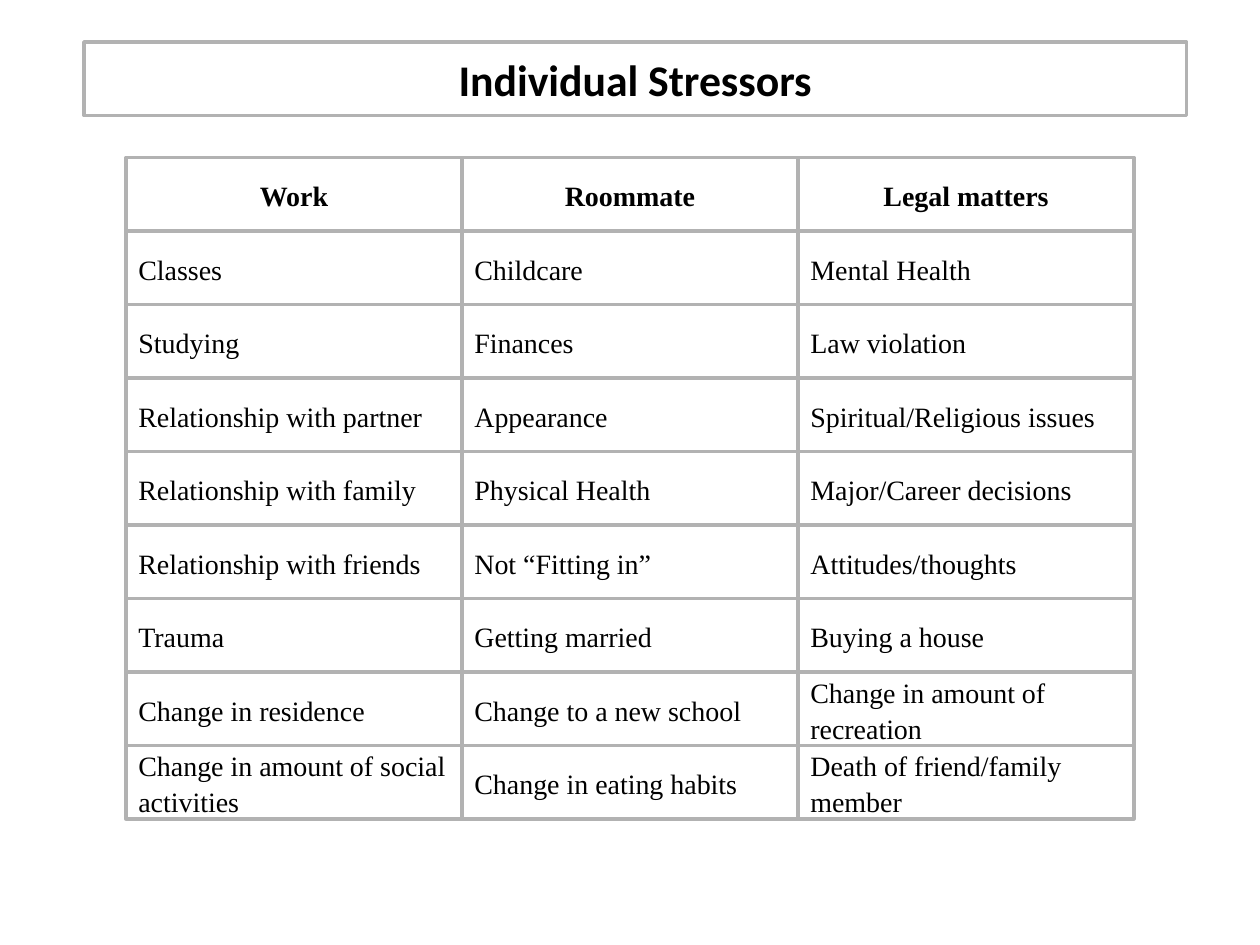
"""Build the Individual Stressors slide: a framed title above a grid of framed cells."""
from pptx import Presentation
from pptx import util as u
from pptx.dml.color import RGBColor
from pptx.enum import shapes, text

TITLE = "Individual Stressors"
HEADINGS = ("Work", "Roommate", "Legal matters")
STRESSORS = [
    ("Classes", "Childcare", "Mental Health"),
    ("Studying", "Finances", "Law violation"),
    ("Relationship with partner", "Appearance", "Spiritual/Religious issues"),
    ("Relationship with family", "Physical Health", "Major/Career decisions"),
    ("Relationship with friends", "Not “Fitting in”", "Attitudes/thoughts"),
    ("Trauma", "Getting married", "Buying a house"),
    ("Change in residence", "Change to a new school", "Change in amount of recreation"),
    ("Change in amount of social activities", "Change in eating habits",
     "Death of friend/family member"),
]
BLACK, WHITE, GREY = "000000", "FFFFFF", "B2B2B2"
LEFT, TOP = 1, 1.25
COL_WIDTH, ROW_HEIGHT = 8 / 3, 7 / 12


def paint(color_format, color):
    color_format.rgb = RGBColor.from_string(color)


def frame(sp):
    sp.fill.solid()
    paint(sp.fill.fore_color, WHITE)
    paint(sp.line.color, GREY)
    sp.line.width = u.Pt(2)


def write(sp, words, font, size, bold, centered, spacing):
    tf = sp.text_frame
    tf.word_wrap = True
    tf.auto_size = text.MSO_AUTO_SIZE.NONE
    tf.vertical_anchor = text.MSO_ANCHOR.MIDDLE
    p = tf.paragraphs[0]
    p.alignment = text.PP_ALIGN.CENTER if centered else text.PP_ALIGN.LEFT
    p.line_spacing = spacing
    r = p.add_run()
    r.text = words
    r.font.name, r.font.size, r.font.bold = font, u.Pt(size), bold
    paint(r.font.color, BLACK)


def add_title(s):
    sp = s.shapes.title
    sp.left, sp.top = u.Inches(2 / 3), u.Inches(1 / 3)
    sp.width, sp.height = u.Inches(8.75), u.Inches(ROW_HEIGHT)
    frame(sp)
    write(sp, TITLE, "Calibri", 25, True, True, 1.0)


def add_stressors(s):
    for i, row in enumerate([HEADINGS, *STRESSORS]):
        for j, words in enumerate(row):
            sp = s.shapes.add_shape(
                shapes.MSO_SHAPE.RECTANGLE,
                u.Inches(LEFT + j * COL_WIDTH), u.Inches(TOP + i * ROW_HEIGHT),
                u.Inches(COL_WIDTH), u.Inches(ROW_HEIGHT))
            sp.shadow.inherit = False
            frame(sp)
            write(sp, words, "Times New Roman", 16, i == 0, i == 0, 1.08)


def main():
    prs = Presentation()
    prs.slide_width, prs.slide_height = u.Inches(10), u.Inches(7.5)
    s = prs.slides.add_slide(prs.slide_layouts[5])
    add_title(s)
    add_stressors(s)
    prs.save("out.pptx")


if __name__ == "__main__":
    main()
